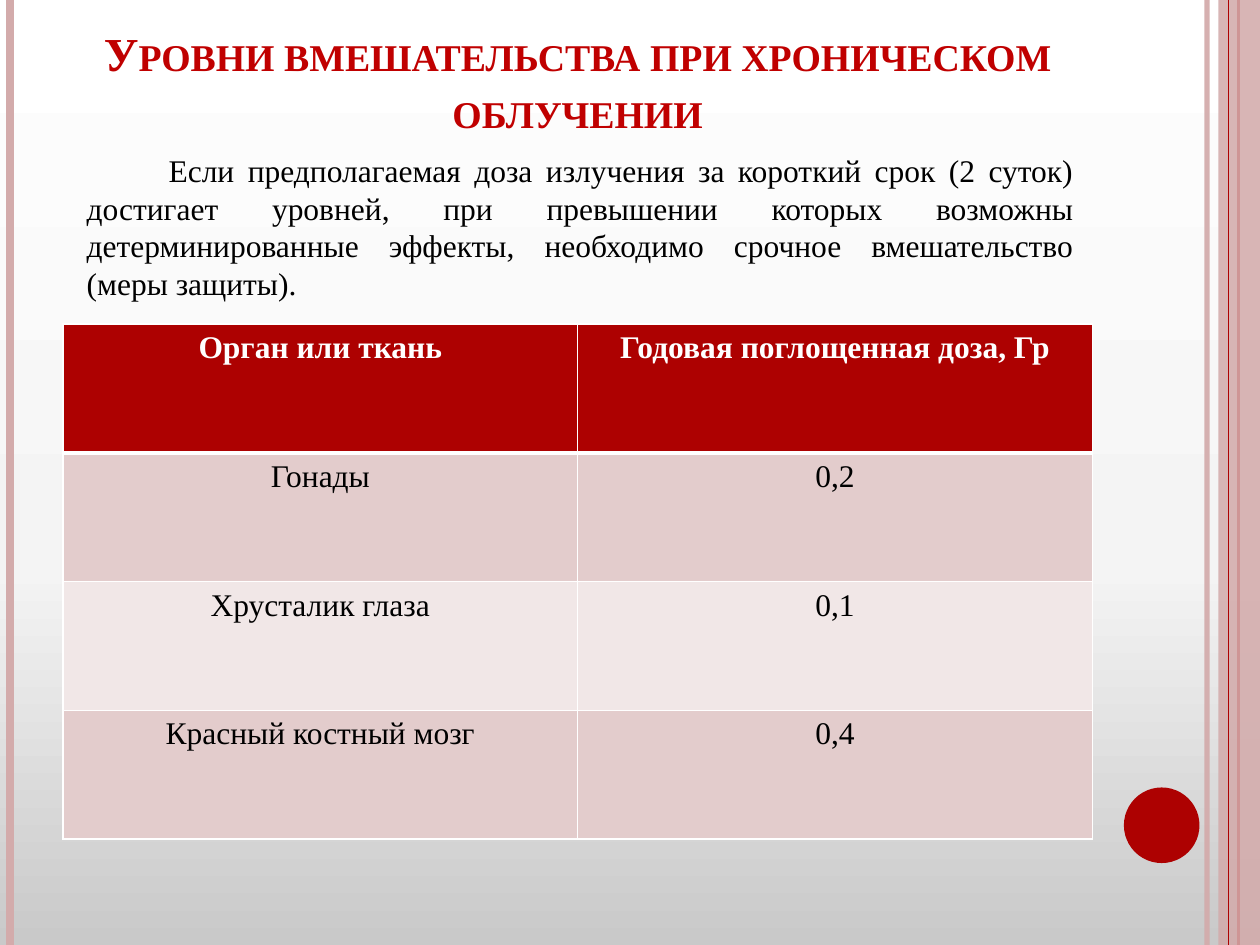
import copy

import pptx
import pptx.dml.color
import pptx.enum.shapes
import pptx.enum.text
import pptx.oxml
import pptx.oxml.ns
import pptx.util

COLORS = {"red": "AD0101", "title": "C00000", "rose": "D3ABAB", "band": "E3CCCC",
          "light": "F1E7E7", "white": "FFFFFF", "black": "000000"}
BACKDROP = [(0, "C9C9C9"), (0.4, "F4F4F4"), (1, "FFFFFF")]
ROWS = [("Орган или ткань", "Годовая поглощенная доза, Гр"), ("Гонады", "0,2"),
        ("Хрусталик глаза", "0,1"), ("Красный костный мозг", "0,4")]
TITLE = "Уровни вмешательства при хроническом облучении"
BODY = ("Если предполагаемая доза излучения за короткий срок (2 суток) достигает уровней, "
        "при превышении которых возможны детерминированные эффекты, "
        "необходимо срочное вмешательство (меры защиты).")
ALIGN = pptx.enum.text.PP_ALIGN
SHAPES = pptx.enum.shapes.MSO_SHAPE
Inches = pptx.util.Inches
qn = pptx.oxml.ns.qn


def color(name):
    """Return the RGB colour stored under a name."""
    return pptx.dml.color.RGBColor.from_string(COLORS[name])


def place(shape, box):
    """Move and size a shape to a box in inches."""
    shape.left, shape.top, shape.width, shape.height = map(Inches, box)


def set_alpha(element, percent):
    """Make the first solid colour of an element partly transparent."""
    tint = element.find(".//" + qn("a:srgbClr"))
    tint.makeelement(qn("a:alpha"), {})
    pptx.oxml.ns  # namespace helpers
    alpha = tint.makeelement(qn("a:alpha"), {"val": str(percent * 1000)})
    tint.append(alpha)


def write(frame, text, size, tone, align, bold=False):
    """Fill a text frame with one formatted paragraph and return it."""
    frame.text = text
    para = frame.paragraphs[0]
    para.alignment = align
    para.font.name, para.font.size, para.font.bold = "Times New Roman", pptx.util.Pt(size), bold
    para.font.color.rgb = color(tone)
    return para


def paint_background(page):
    """Paint the vertical gradient behind the page."""
    fill = page.background.fill
    fill.gradient()
    fill.gradient_angle = 90
    stops = page.element.find(".//" + qn("a:gsLst"))
    stops.insert(1, copy.deepcopy(stops[0]))
    for stop, (position, shade) in zip(fill.gradient_stops, BACKDROP):
        stop.position = position
        stop.color.rgb = pptx.dml.color.RGBColor.from_string(shade)


def add_stripe(page, x, height, tone, weight, opacity=100):
    """Draw a vertical line over the full page height."""
    line = page.shapes.add_connector(pptx.enum.shapes.MSO_CONNECTOR.STRAIGHT,
                                     Inches(x), 0, Inches(x), Inches(height))
    line.line.color.rgb, line.line.width = color(tone), pptx.util.Pt(weight)
    properties = line.element.spPr
    properties.append(properties.makeelement(qn("a:effectLst"), {}))
    if opacity < 100:
        set_alpha(properties, opacity)


def add_plain(page, kind, box, tone, opacity=100):
    """Add a filled shape without outline."""
    shape = page.shapes.add_shape(kind, *map(Inches, box))
    shape.shadow.inherit = False
    shape.fill.solid()
    shape.fill.fore_color.rgb = color(tone)
    shape.line.fill.background()
    if opacity < 100:
        set_alpha(shape.element.spPr, opacity)


def add_frame(page, box):
    """Draw the side stripes and the disc."""
    left, top, width, height = box
    add_stripe(page, left + 0.958 * width, height, "rose", 3, 93)
    add_stripe(page, left + 0.008 * width, height, "rose", 4.5)
    add_stripe(page, left + 0.983 * width, height, "red", 1.5)
    add_plain(page, SHAPES.RECTANGLE, (left + 0.967 * width, top, 0.033 * width, height), "rose", 87)
    add_stripe(page, left + 0.975 * width, height, "red", 0.75)
    disc = 0.06 * width
    add_plain(page, SHAPES.OVAL, (left + 0.892 * width, top + height * 5 / 6, disc, disc), "red")


def add_title(page, box):
    """Place the small-caps heading in the title placeholder."""
    title = page.shapes.title
    place(title, box)
    frame = title.text_frame
    frame.auto_size = pptx.enum.text.MSO_AUTO_SIZE.NONE
    frame.vertical_anchor = pptx.enum.text.MSO_ANCHOR.BOTTOM
    write(frame, TITLE, 27, "title", ALIGN.CENTER, True)
    title.element.find(".//" + qn("a:defRPr")).set("cap", "small")


def add_body(page, box):
    """Place the justified paragraph with its first-line indent."""
    frame = page.shapes.add_textbox(*map(Inches, box)).text_frame
    frame.word_wrap = True
    para = write(frame, BODY, 18, "black", ALIGN.JUSTIFY)
    para._p.get_or_add_pPr().set("indent", str(Inches(0.65)))


def add_borders(cell, bottom):
    """Rule a cell in white with the given bottom weight."""
    properties = cell._tc.get_or_add_tcPr()
    for place_index, (side, weight) in enumerate(zip("LRTB", (1, 1, 1, bottom))):
        rule = properties.makeelement(qn("a:ln" + side), {"w": str(pptx.util.Pt(weight))})
        fill = rule.makeelement(qn("a:solidFill"), {})
        fill.append(fill.makeelement(qn("a:srgbClr"), {"val": COLORS["white"]}))
        rule.append(fill)
        properties.insert(place_index, rule)


def add_doses(page, box):
    """Build the banded table of organ doses."""
    table = page.shapes.add_table(len(ROWS), len(ROWS[0]), *map(Inches, box)).table
    for number, row in enumerate(ROWS):
        header = number == 0
        tone = "red" if header else ("band" if number % 2 else "light")
        for column, text in enumerate(row):
            cell = table.cell(number, column)
            cell.fill.solid()
            cell.fill.fore_color.rgb = color(tone)
            write(cell.text_frame, text, 18, "white" if header else "black", ALIGN.CENTER, header)
            add_borders(cell, 3 if header else 1)


def main():
    """Build and save the deck."""
    deck = pptx.Presentation()
    width, height = 10, 7.5
    deck.slide_width, deck.slide_height = Inches(width), Inches(height)
    page = deck.slides.add_slide(deck.slide_layouts[5])
    margin, content = 0.05 * width, 0.817 * width
    paint_background(page)
    add_frame(page, (0, 0, width, height))
    add_title(page, (margin, 0.028 * height, content, 0.125 * height))
    add_doses(page, (margin, 0.343 * height, content, 0.545 * height))
    add_body(page, (margin + 0.09, 0.153 * height, content - 0.14, 0.175 * height))
    deck.save("out.pptx")


if __name__ == "__main__":
    main()
